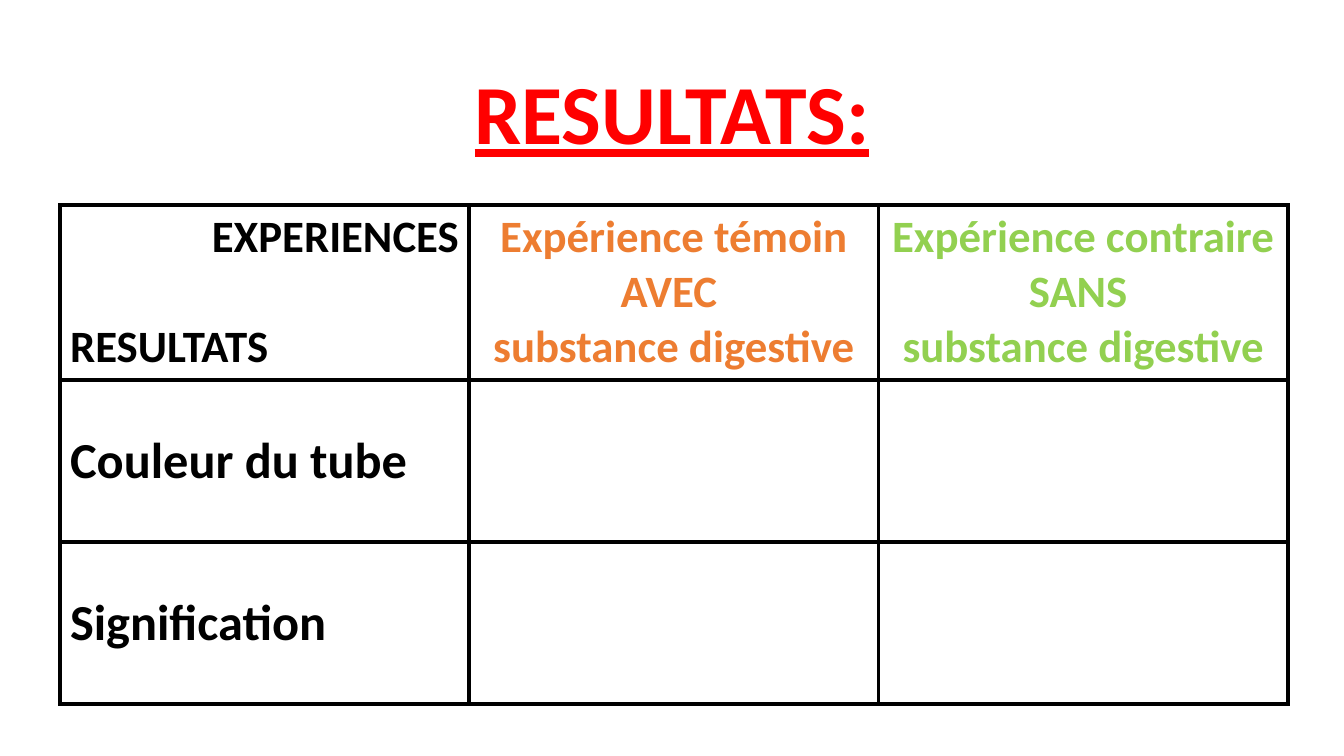
from lxml.etree import SubElement
from pptx import Presentation
from pptx.dml.color import RGBColor
from pptx.enum.text import MSO_ANCHOR as Anchor, PP_ALIGN as Align
from pptx.oxml.ns import qn
from pptx.util import Emu, Pt

EMU_PER_PX = 914400 / 100.8
BLACK = "000000"
HEADINGS = [
    (["Expérience témoin", "AVEC ", "substance digestive"], "ED7D31"),
    (["Expérience contraire", "SANS ", "substance digestive"], "92D050"),
]
ROW_LABELS = ["Couleur du tube", "Signification"]


def px(length):
    return Emu(round(length * EMU_PER_PX))


def color(hex_string):
    return RGBColor.from_string(hex_string)


def write(paragraph, text, size=32, ink=BLACK, align=Align.LEFT, underline=False,
          line_spacing=None, space_before=0):
    paragraph.alignment = align
    paragraph.line_spacing = line_spacing
    paragraph.space_before = Pt(space_before)
    run = paragraph.add_run()
    run.text = text
    font = run.font
    font.name = "Calibri"
    font.size = Pt(size)
    font.bold = True
    font.underline = underline
    font.color.rgb = color(ink)


def add_title(slide, left, top, width, height):
    shape = slide.shapes.add_textbox(px(left), px(top), px(width), px(height))
    frame = shape.text_frame
    frame.word_wrap = True
    frame.vertical_anchor = Anchor.BOTTOM
    write(frame.paragraphs[0], "RESULTATS:", size=60, ink="FF0000",
          align=Align.CENTER, underline=True, line_spacing=0.9)


def style_cell(cell, border=3):
    properties = cell._tc.get_or_add_tcPr()
    for side in ("lnL", "lnR", "lnT", "lnB"):
        line = SubElement(properties, qn(f"a:{side}"), w=str(Pt(border)))
        SubElement(SubElement(line, qn("a:solidFill")), qn("a:srgbClr"), val=BLACK)
    cell.fill.background()


def add_results_table(slide, left, top, width, header_height, row_height):
    rows, columns = len(ROW_LABELS) + 1, len(HEADINGS) + 1
    height = header_height + row_height * len(ROW_LABELS)
    table = slide.shapes.add_table(rows, columns, px(left), px(top), px(width), px(height)).table
    table.first_row = table.horz_banding = False
    for column in table.columns:
        column.width = px(width / columns)
    for index, row in enumerate(table.rows):
        row.height = px(row_height if index else header_height)
    for cell in table.iter_cells():
        style_cell(cell)

    corner = table.cell(0, 0).text_frame
    write(corner.paragraphs[0], "EXPERIENCES", align=Align.RIGHT)
    write(corner.add_paragraph(), "RESULTATS", space_before=39)

    for index, (lines, ink) in enumerate(HEADINGS, 1):
        frame = table.cell(0, index).text_frame
        for number, text in enumerate(lines):
            paragraph = frame.add_paragraph() if number else frame.paragraphs[0]
            write(paragraph, text, ink=ink, align=Align.CENTER)

    for index, label in enumerate(ROW_LABELS, 1):
        cell = table.cell(index, 0)
        cell.vertical_anchor = Anchor.MIDDLE
        write(cell.text_frame.paragraphs[0], label, size=36)


def main():
    presentation = Presentation()
    presentation.slide_width = px(1344)
    presentation.slide_height = px(756)
    slide = presentation.slides.add_slide(presentation.slide_layouts[6])
    add_title(slide, 168, 63, 1008, 105)
    add_results_table(slide, 60, 205, 1228, 175, 162)
    presentation.save("out.pptx")


if __name__ == "__main__":
    main()
